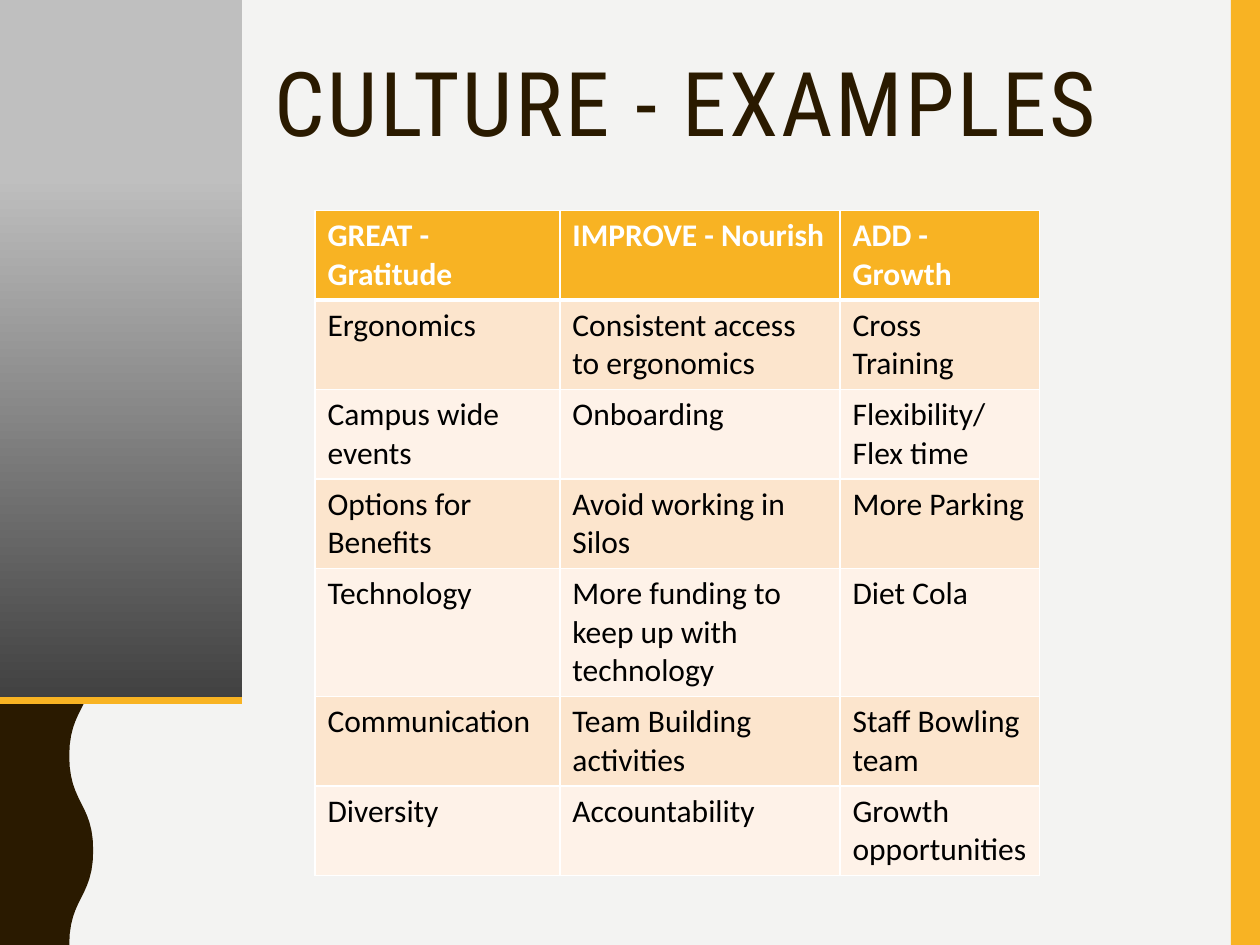
from copy import deepcopy

from lxml.etree import SubElement as Sub
from pptx import Presentation
from pptx.dml.color import RGBColor as RGB
from pptx.enum.shapes import MSO_CONNECTOR as Link, MSO_SHAPE as Kind
from pptx.enum.text import MSO_ANCHOR as Anchor, MSO_AUTO_SIZE as Fit, PP_ALIGN as Align
from pptx.oxml.ns import qn
from pptx.util import Inches as In, Pt

WIDE, HIGH = 10, 7.5
HUES = {
    "back": "F3F3F2", "gold": "F8B323", "dark": "2A1A00", "white": "FFFFFF",
    "black": "000000", "odd": "FCE5CD", "even": "FEF2E8",
    "ash": "BFBFBF", "coal": "404040",
}
COLS = [1.94, 2.22, 1.58]
ROWS = [
    ["GREAT - Gratitude", "IMPROVE - Nourish", "ADD - Growth"],
    ["Ergonomics", "Consistent access to ergonomics", "Cross Training"],
    ["Campus wide events", "Onboarding", "Flexibility/Flex time"],
    ["Options for Benefits", "Avoid working in Silos", "More Parking"],
    ["Technology", "More funding to keep up with technology", "Diet Cola"],
    ["Communication", "Team Building activities", "Staff Bowling team"],
    ["Diversity", "Accountability", "Growth opportunities"],
]


def hue(name):
    return RGB.from_string(HUES[name])


def paint(shape, name):
    shape.shadow.inherit = False
    shape.fill.solid()
    shape.fill.fore_color.rgb = hue(name)
    shape.line.fill.background()


def add_run(para, text, font, size, name, bold=False):
    run = para.add_run()
    run.text = text
    run.font.name, run.font.size, run.font.bold = font, Pt(size), bold
    run.font.color.rgb = hue(name)
    return run


def add_rect(slide, box, name):
    rect = slide.shapes.add_shape(Kind.RECTANGLE, *map(In, box))
    paint(rect, name)
    return rect


def add_wave(slide, box, dip, waves=5, steps=12):
    """Fill the box up to a wavy right edge that swings in by dip."""
    left, top, wide, high = box
    half = high / (2 * waves)
    edge = []
    for turn in range(2 * waves):
        for step in range(steps):
            t = step / steps
            ease = 3 * t**2 - 2 * t**3
            down = 1.5 * t * (1 - t) + t**3
            swing = 1 - ease if turn % 2 else ease
            edge.append((left + wide - dip * (1 - swing), top + half * (turn + down)))
    edge += [(left + wide - dip, top + high), (left, top + high)]
    form = slide.shapes.build_freeform(In(left), In(top))
    form.add_line_segments([(In(x), In(y)) for x, y in edge], close=True)
    paint(form.convert_to_shape(), "dark")


def add_panel(slide, box):
    """Grey fade with a gold rule along its foot."""
    left, top, wide, high = box
    rect = add_rect(slide, box, "ash")
    rect.fill.gradient()
    rect.fill.gradient_angle = 270
    stops = rect._element.spPr.find(qn("a:gradFill")).find(qn("a:gsLst"))
    stops.insert(1, deepcopy(stops[0]))
    shades = [(0, "ash"), (0.25, "ash"), (1, "coal")]
    for stop, (spot, name) in zip(rect.fill.gradient_stops, shades):
        stop.position = spot
        stop.color.rgb = hue(name)

    foot = top + high - 0.02
    rule = slide.shapes.add_connector(
        Link.STRAIGHT, In(left), In(foot), In(left + wide), In(foot))
    rule.line.color.rgb, rule.line.width = hue("gold"), Pt(4)
    Sub(rule._element.spPr, qn("a:effectLst"))


def set_title(slide, box, text):
    title = slide.shapes.title
    title.left, title.top, title.width, title.height = map(In, box)
    frame = title.text_frame
    frame.word_wrap, frame.auto_size = True, Fit.NONE
    frame.vertical_anchor = Anchor.TOP
    para = frame.paragraphs[0]
    para.alignment, para.line_spacing = Align.LEFT, 0.9
    run = add_run(para, text, "Roboto Condensed", 51, "dark")
    run.font._element.set("spc", "150")


def add_edges(cell, foot):
    props = cell._tc.get_or_add_tcPr()
    for side, width in zip("LRTB", (1, 1, 1, foot)):
        line = Sub(props, qn(f"a:ln{side}"), w=str(Pt(width)))
        Sub(Sub(line, qn("a:solidFill")), qn("a:srgbClr"), val=HUES["white"])


def add_grid(slide, box):
    left, top, wide, high = box
    grid = slide.shapes.add_table(len(ROWS), len(COLS), *map(In, box)).table
    for col, share in zip(grid.columns, COLS):
        col.width = In(wide * share / sum(COLS))
    for i, texts in enumerate(ROWS):
        grid.rows[i].height = In(high / len(ROWS))
        head = i == 0
        fill = "gold" if head else "odd" if i % 2 else "even"
        for j, text in enumerate(texts):
            cell = grid.cell(i, j)
            add_edges(cell, 3 if head else 1)
            cell.fill.solid()
            cell.fill.fore_color.rgb = hue(fill)
            add_run(cell.text_frame.paragraphs[0], text, "Calibri", 18,
                    "white" if head else "black", head)


def main():
    deck = Presentation()
    deck.slide_width, deck.slide_height = In(WIDE), In(HIGH)
    slide = deck.slides.add_slide(deck.slide_layouts[5])
    slide.background.fill.solid()
    slide.background.fill.fore_color.rgb = hue("back")
    bar = 0.23
    add_rect(slide, (WIDE - bar, 0, bar, HIGH), "gold")
    add_wave(slide, (0, 0, 0.74, HIGH), 0.19)
    add_panel(slide, (0, 0, 1.92, 5.58))
    set_title(slide, (2.08, 0.42, 7.29, 1.63), "CULTURE - EXAMPLES")
    add_grid(slide, (WIDE / 4, 1.67, 5.75, 4.29))
    deck.save("out.pptx")


if __name__ == "__main__":
    main()
